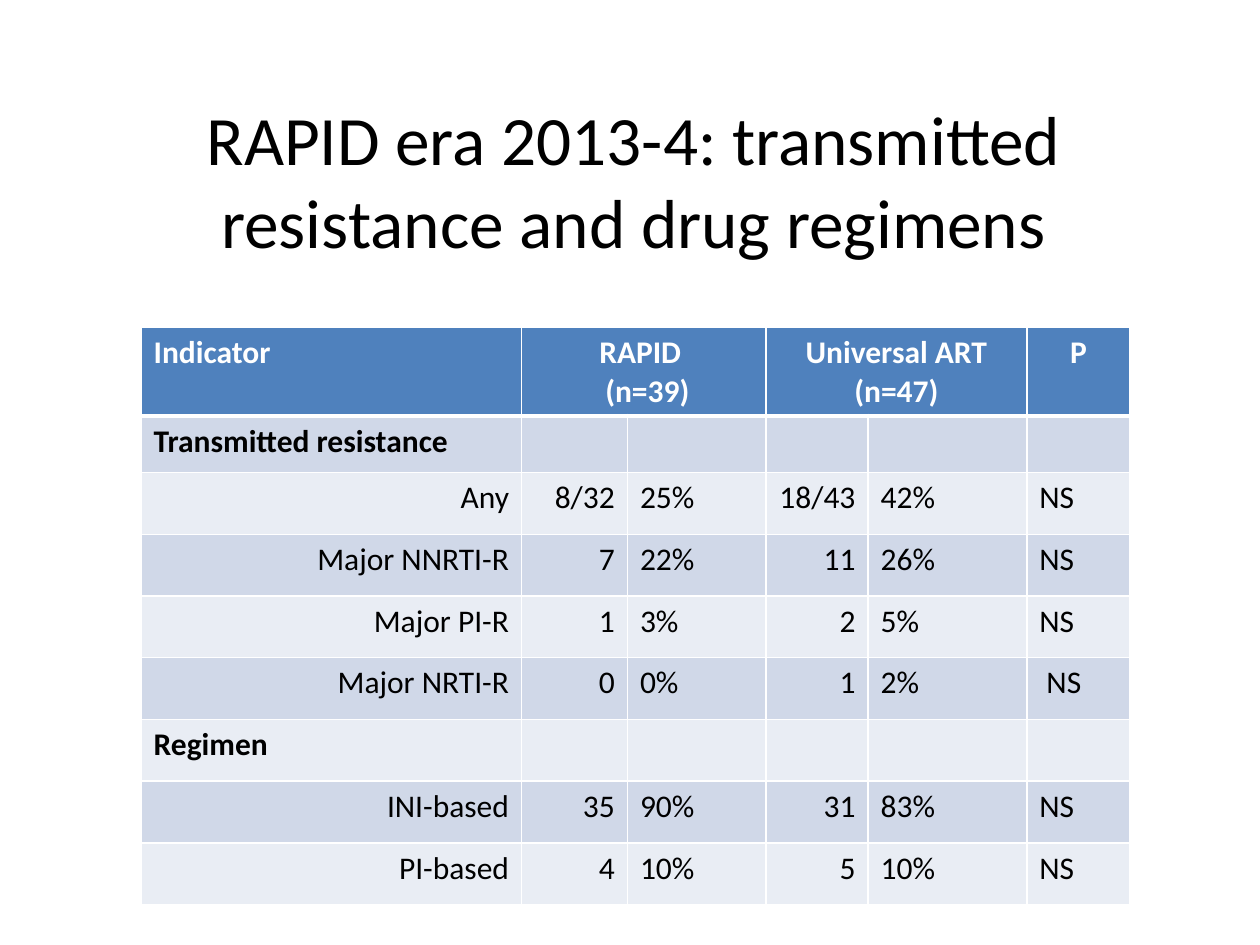
import dataclasses

import lxml.etree
import pptx
import pptx.dml.color
import pptx.enum.text
import pptx.oxml.ns
import pptx.util

Inches = pptx.util.Inches
Align = pptx.enum.text.PP_ALIGN
Anchor = pptx.enum.text.MSO_ANCHOR


@dataclasses.dataclass(frozen=True)
class Theme:
    font: str = "Calibri"
    title_size: float = 39.6
    table_size: float = 18
    text: str = "000000"
    header_text: str = "FFFFFF"
    header_fill: str = "4F81BD"
    bands: tuple = ("D0D8E8", "E9EDF4")
    border: str = "FFFFFF"
    thin: float = 1
    thick: float = 3


HEADERS = {0: "Indicator", 1: "RAPID \n (n=39)", 3: "Universal ART (n=47)", 5: "P"}
HEADER_SPANS = ((1, 2), (3, 4))
SECTIONS = {
    "Transmitted resistance": [
        ("Any", "8/32", "25%", "18/43", "42%", "NS"),
        ("Major NNRTI-R", "7", "22%", "11", "26%", "NS"),
        ("Major PI-R", "1", "3%", "2", "5%", "NS"),
        ("Major NRTI-R", "0", "0%", "1", "2%", " NS"),
    ],
    "Regimen": [
        ("INI-based", "35", "90%", "31", "83%", "NS"),
        ("PI-based", "4", "10%", "5", "10%", "NS"),
    ],
}
COLUMN_WIDTHS = (3.02, 0.84, 1.1, 0.81, 1.26, 0.82)
COLUMN_ALIGNS = (Align.RIGHT, Align.RIGHT, Align.LEFT, Align.RIGHT, Align.LEFT, Align.LEFT)
HEADER_HEIGHT, FIRST_SECTION_HEIGHT, ROW_HEIGHT = 0.48, 0.45, 0.49


class SlideBuilder:
    def __init__(self, presentation, theme):
        self.theme = theme
        self.slide = presentation.slides.add_slide(presentation.slide_layouts[6])

    def fill_text(self, frame, text, size, color, align, bold=False):
        frame.word_wrap = True
        for index, line in enumerate(text.split("\n")):
            paragraph = frame.paragraphs[0] if index == 0 else frame.add_paragraph()
            paragraph.alignment = align
            run = paragraph.add_run()
            run.text = line
            formats = {"name": self.theme.font, "size": pptx.util.Pt(size), "bold": bold}
            for attribute, value in formats.items():
                setattr(run.font, attribute, value)
            run.font.color.rgb = pptx.dml.color.RGBColor.from_string(color)

    def title(self, text, left, top, width, height):
        box = self.slide.shapes.add_textbox(*map(Inches, (left, top, width, height)))
        box.text_frame.vertical_anchor = Anchor.MIDDLE
        self.fill_text(box.text_frame, text, self.theme.title_size, self.theme.text,
                       Align.CENTER)

    def table(self, left, top, widths, heights):
        frame = self.slide.shapes.add_table(
            len(heights), len(widths),
            *map(Inches, (left, top, sum(widths), sum(heights))))
        for column, width in zip(frame.table.columns, widths):
            column.width = Inches(width)
        for row, height in zip(frame.table.rows, heights):
            row.height = Inches(height)
        return frame.table

    def cell(self, cell, text, fill, color, align, bold=False, top=None, bottom=None):
        """Style one table cell; top and bottom are border widths in points."""
        thin = self.theme.thin
        self.borders(cell, {"L": thin, "R": thin, "T": top or thin, "B": bottom or thin})
        cell.fill.solid()
        cell.fill.fore_color.rgb = pptx.dml.color.RGBColor.from_string(fill)
        if text:
            self.fill_text(cell.text_frame, text, self.theme.table_size, color, align, bold)

    def borders(self, cell, widths):
        qn = pptx.oxml.ns.qn
        properties = cell._tc.get_or_add_tcPr()
        for side, width in widths.items():
            line = lxml.etree.SubElement(
                properties, qn(f"a:ln{side}"), w=str(pptx.util.Pt(width)))
            solid = lxml.etree.SubElement(line, qn("a:solidFill"))
            lxml.etree.SubElement(solid, qn("a:srgbClr"), val=self.theme.border)


def add_results(builder):
    theme = builder.theme
    body = []
    for section, rows in SECTIONS.items():
        body.append((section,) + ("",) * (len(COLUMN_WIDTHS) - 1))
        body.extend(rows)
    heights = [HEADER_HEIGHT, FIRST_SECTION_HEIGHT] + [ROW_HEIGHT] * (len(body) - 1)
    results = builder.table(1.12, 2.6, COLUMN_WIDTHS, heights)

    for first, last in HEADER_SPANS:
        results.cell(0, first).merge(results.cell(0, last))
    for column in range(len(COLUMN_WIDTHS)):
        builder.cell(results.cell(0, column), HEADERS.get(column, ""),
                     theme.header_fill, theme.header_text,
                     Align.CENTER if column else Align.LEFT,
                     bold=True, bottom=theme.thick)

    for index, values in enumerate(body):
        is_section = values[0] in SECTIONS
        for column, value in enumerate(values):
            builder.cell(results.cell(index + 1, column), value,
                         theme.bands[index % 2], theme.text,
                         Align.LEFT if is_section else COLUMN_ALIGNS[column],
                         bold=is_section, top=None if index else theme.thick)


def main():
    presentation = pptx.Presentation()
    presentation.slide_width = Inches(10)
    presentation.slide_height = Inches(7.5)
    builder = SlideBuilder(presentation, Theme())
    builder.title("RAPID era 2013-4: transmitted resistance and drug regimens",
                  0.53, 0.8, 9, 1.25)
    add_results(builder)
    presentation.save("out.pptx")


if __name__ == "__main__":
    main()
